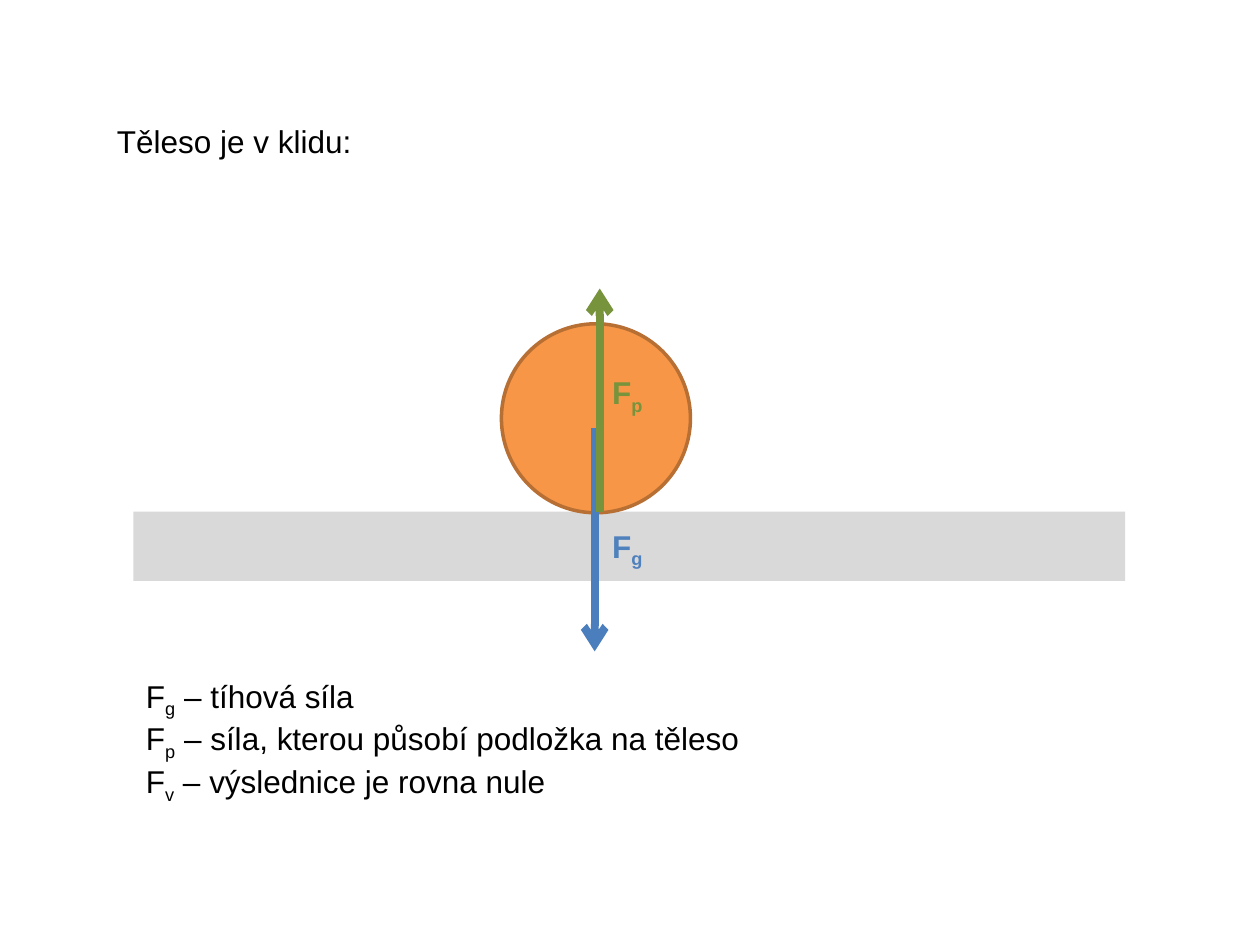
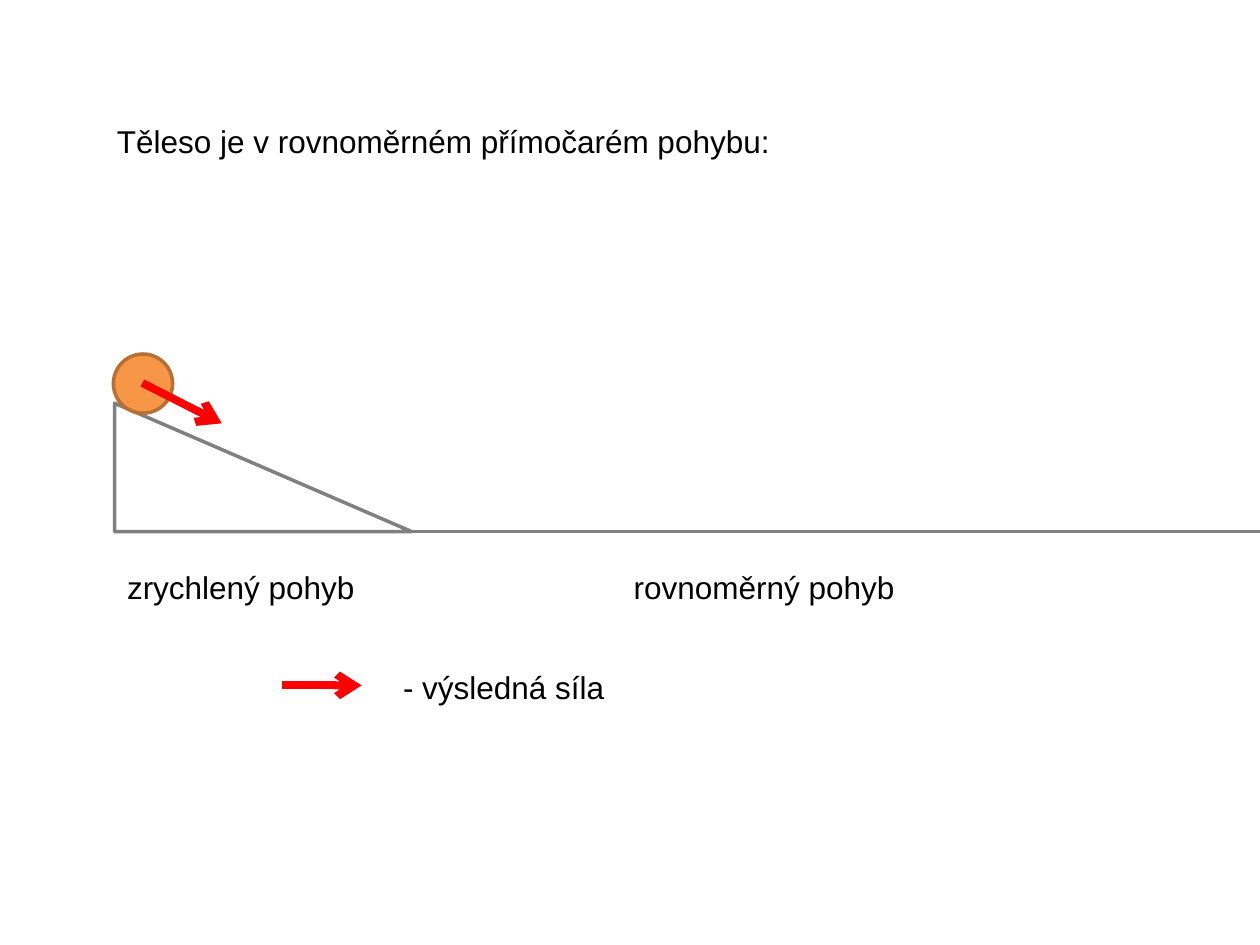
from dataclasses import dataclass

from lxml import etree
from pptx import Presentation
from pptx import util as u
from pptx.dml.color import RGBColor
from pptx.enum import shapes, text
from pptx.oxml.ns import qn

# Shared style
FONT = "Arial"
SIZE = u.Pt(18)
BLACK, WHITE, GRAY, BAND = "000000", "FFFFFF", "808080", "D9D9D9"
BALL, BALL_EDGE = "F79646", "B76F34"
BLUE_LINE, BLUE_TEXT, GREEN, RED = "4B7EBC", "4F81BD", "77933C", "FF0000"
EDGE_WIDTH, FORCE_WIDTH = 2, 4.5
LINE_HEIGHT = 0.4


@dataclass(frozen=True)
class Run:
    words: str
    subscript: bool = False


@dataclass(frozen=True)
class Force:
    symbol: str
    x: float
    start_y: float
    end_y: float
    line: str
    label_y: float
    label: str


FORCES = [
    Force("g", 4.72, 3.4, 5.17, BLUE_LINE, 4.13, BLUE_TEXT),
    Force("p", 4.76, 4.06, 2.29, GREEN, 2.91, GREEN),
]
MEANINGS = [
    ("g", "tíhová síla"),
    ("p", "síla, kterou působí podložka na těleso"),
    ("v", "výslednice je rovna nule"),
]
LABEL_X = 4.76


def rgb(color: str) -> RGBColor:
    return RGBColor.from_string(color)


def force_runs(symbol: str) -> list[Run]:
    return [Run("F"), Run(symbol, subscript=True)]


def add_text(parent, x: float, y: float, width: float, height: float,
             paragraphs: list[list[Run]], color: str = BLACK,
             bold: bool = False, tab: float | None = None) -> None:
    box = parent.add_textbox(u.Inches(x), u.Inches(y),
                             u.Inches(width), u.Inches(height))
    frame = box.text_frame
    frame.word_wrap = True
    frame.auto_size = text.MSO_AUTO_SIZE.SHAPE_TO_FIT_TEXT
    for index, runs in enumerate(paragraphs):
        paragraph = frame.add_paragraph() if index else frame.paragraphs[0]
        if tab is not None:
            stops = etree.SubElement(paragraph._p.get_or_add_pPr(), qn("a:tabLst"))
            etree.SubElement(stops, qn("a:tab"), pos=str(u.Inches(tab)), algn="l")
        for part in runs:
            run = paragraph.add_run()
            run.text = part.words
            run.font.name, run.font.size, run.font.bold = FONT, SIZE, bold
            run.font.color.rgb = rgb(color)
            if part.subscript:
                run._r.get_or_add_rPr().set("baseline", "-25000")


def add_title(slide, words: str) -> None:
    add_text(slide.shapes, 0.83, 0.92, 8.5, LINE_HEIGHT, [[Run(words)]])


def add_solid(parent, kind: shapes.MSO_SHAPE, x: float, y: float,
              width: float, height: float, fill: str,
              edge: str | None = None) -> None:
    solid = parent.add_shape(kind, u.Inches(x), u.Inches(y),
                             u.Inches(width), u.Inches(height))
    solid.shadow.inherit = False
    solid.fill.solid()
    solid.fill.fore_color.rgb = rgb(fill)
    if edge:
        solid.line.color.rgb = rgb(edge)
        solid.line.width = u.Pt(EDGE_WIDTH)
    else:
        solid.line.fill.background()


def add_ball(parent, x: float, y: float, diameter: float) -> None:
    add_solid(parent, shapes.MSO_SHAPE.OVAL, x, y, diameter, diameter,
              BALL, BALL_EDGE)


def add_line(parent, start: tuple[float, float], end: tuple[float, float],
             color: str, width: float = FORCE_WIDTH, arrow: bool = True) -> None:
    line = parent.add_connector(shapes.MSO_CONNECTOR.STRAIGHT,
                                *map(u.Inches, start + end))
    line.line.color.rgb = rgb(color)
    line.line.width = u.Pt(width)
    if arrow:
        etree.SubElement(line.line._get_or_add_ln(), qn("a:tailEnd"), type="arrow")
    etree.SubElement(line._element.spPr, qn("a:effectLst"))


def build_rest(slide) -> None:
    add_title(slide, "Těleso je v klidu:")

    # Ball on its support, with the two forces
    scene = slide.shapes.add_group_shape().shapes
    add_solid(scene, shapes.MSO_SHAPE.RECTANGLE, 1.06, 4.06, 7.87, 0.55, BAND)
    add_ball(scene, 3.98, 2.57, 1.5)
    for force in FORCES:
        add_line(scene, (force.x, force.start_y), (force.x, force.end_y), force.line)
        add_text(scene, LABEL_X, force.label_y, 0.71, LINE_HEIGHT,
                 [force_runs(force.symbol)], force.label, bold=True)

    # Meaning of the symbols
    add_text(slide.shapes, 1.06, 5.32, 8.43, 1.01,
             [force_runs(symbol) + [Run(f" – {meaning}")]
              for symbol, meaning in MEANINGS])


def build_motion(slide) -> None:
    parts = slide.shapes
    left, ground = 0.91, 4.22

    # Ground and slope
    add_line(parts, (left, ground), (10, ground), GRAY, 1.5, arrow=False)
    slope_height = 1.02
    add_solid(parts, shapes.MSO_SHAPE.RIGHT_TRIANGLE, left, ground - slope_height,
              2.36, slope_height, WHITE, GRAY)
    add_title(slide, "Těleso je v rovnoměrném přímočarém pohybu:")

    # Ball with the resulting force
    add_ball(parts, 0.9, 2.81, 0.47)
    add_line(parts, (1.13, 3.04), (1.76, 3.36), RED)

    # Legend and names of the two stages
    add_text(parts, 3.1, 5.25, 2.52, LINE_HEIGHT, [[Run("- výsledná síla")]])
    add_line(parts, (2.24, 5.44), (2.87, 5.44), RED)
    add_text(parts, left, 4.46, 8.82, LINE_HEIGHT,
             [[Run("zrychlený pohyb\trovnoměrný pohyb")]], tab=4.02)


def main() -> None:
    deck = Presentation()
    deck.slide_width, deck.slide_height = u.Inches(10), u.Inches(7.5)
    blank = deck.slide_layouts[6]
    for build in (build_rest, build_motion):
        build(deck.slides.add_slide(blank))
    deck.save("out.pptx")


if __name__ == "__main__":
    main()
